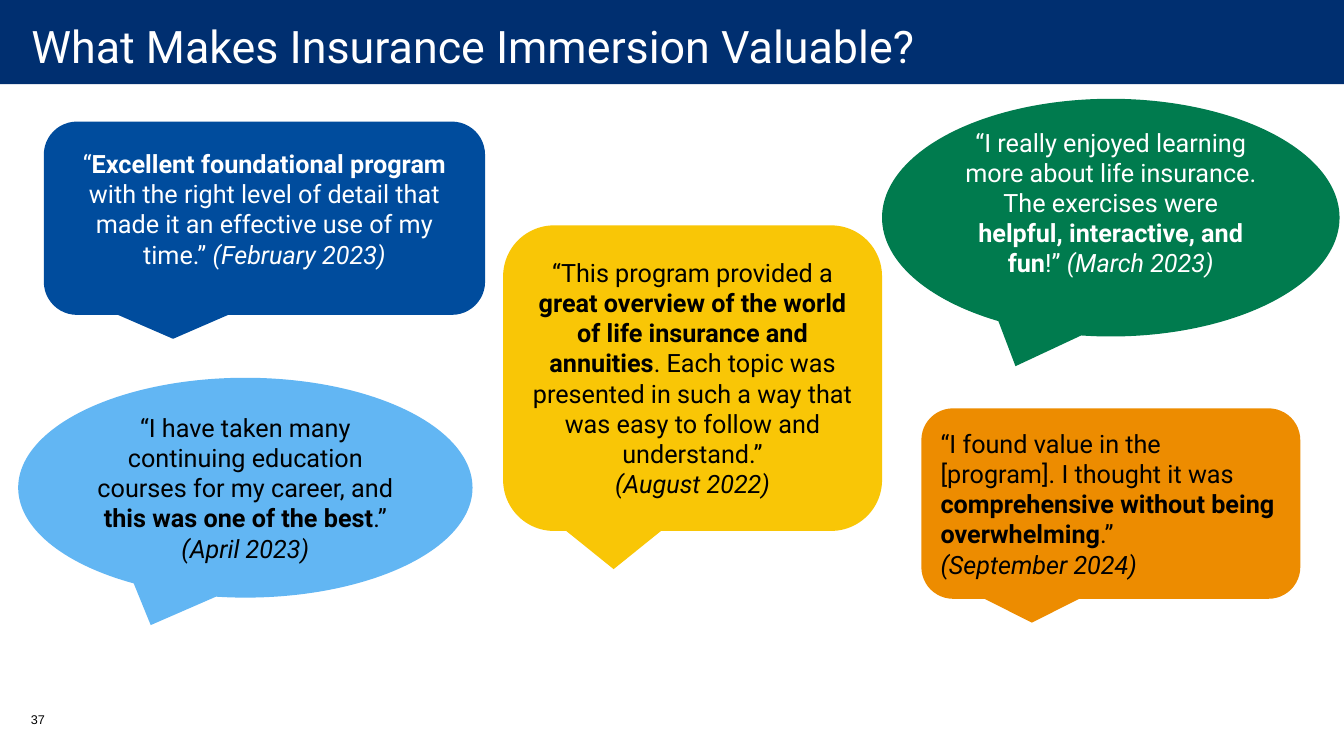
from pptx import Presentation
from pptx.dml.color import RGBColor
from pptx.enum import shapes, text
from pptx.util import Cm, Pt

COLORS = {
    "navy": "002F70", "blue": "004C9D", "sky": "62B6F3", "yellow": "F9C606",
    "green": "007B4E", "orange": "ED8C00", "white": "FFFFFF", "black": "000000",
}
HEADLINE = "What Makes Insurance Immersion Valuable?"
PAGE_NUMBER = "37"
ROUNDED = shapes.MSO_SHAPE.ROUNDED_RECTANGULAR_CALLOUT
OVAL = shapes.MSO_SHAPE.OVAL_CALLOUT
CENTER, LEFT = text.PP_ALIGN.CENTER, text.PP_ALIGN.LEFT

# Each quote: outline, box in cm, fill, text colour, alignment,
# extra space under the text in cm, paragraphs of (words, style) runs
QUOTES = [
    (ROUNDED, (1.14, 3.1, 11.05, 4.8), "blue", "white", CENTER, 0.48, [
        [("“", ""), ("Excellent foundational program ", "bold"),
         ("with the right level of detail that made it an effective use of my time.” ", ""),
         ("(February 2023)", "italic")]]),
    (OVAL, (0.46, 9.52, 11.45, 5.54), "sky", "black", CENTER, 0, [
        [("“I have taken many continuing education courses for my career, and ", ""),
         ("this was one of the best", "bold"), (".”", "")],
        [("(April 2023)", "italic")]]),
    (ROUNDED, (12.68, 5.68, 9.55, 7.7), "yellow", "black", CENTER, 0, [
        [("“This program provided a ", ""),
         ("great overview of the world of life insurance and annuities", "bold"),
         (". Each topic was presented in such a way that was easy to follow and understand.”", "")],
        [("(August 2022)", "italic")]]),
    (OVAL, (22.23, 2.49, 11.53, 5.99), "green", "white", CENTER, 0.76, [
        [("“I really enjoyed learning more about life insurance. The exercises were ", ""),
         ("helpful, interactive, and fun", "bold"), ("!” ", ""),
         ("(March 2023)", "italic")]]),
    (ROUNDED, (23.22, 10.29, 9.55, 4.8), "orange", "black", LEFT, 0, [
        [("“I found value in the [program]. I thought it was ", ""),
         ("comprehensive without being overwhelming", "bold"), (".”", "")],
        [("(September 2024)", "italic")]]),
]


def color(name):
    return RGBColor.from_string(COLORS[name])


def add_run(paragraph, words, size, ink, face="Roboto", style=""):
    run = paragraph.add_run()
    run.text = words
    run.font.name, run.font.size = face, Pt(size)
    run.font.bold, run.font.italic = style == "bold", style == "italic"
    run.font.color.rgb = color(ink)


def add_filled(slide, outline, box, fill):
    shape = slide.shapes.add_shape(outline, *map(Cm, box))
    shape.shadow.inherit = False
    shape.fill.solid()
    shape.fill.fore_color.rgb = color(fill)
    shape.line.fill.background()
    return shape


def add_quote(slide, outline, box, fill, ink, align, space_under, paragraphs):
    callout = add_filled(slide, outline, box, fill)
    frame = callout.text_frame
    frame.word_wrap = True
    frame.vertical_anchor = text.MSO_ANCHOR.MIDDLE
    frame.margin_bottom = Cm(0.13 + space_under)
    for index, runs in enumerate(paragraphs):
        paragraph = frame.add_paragraph() if index else frame.paragraphs[0]
        paragraph.alignment = align
        for words, style in runs:
            add_run(paragraph, words, 18, ink, style=style)
    return callout


def main():
    prs = Presentation()
    prs.slide_width, prs.slide_height = Cm(33.87), Cm(19.05)
    slide = prs.slides.add_slide(prs.slide_layouts[5])

    # Header bar, placed behind the title
    bar = add_filled(slide, shapes.MSO_SHAPE.RECTANGLE, (0, -0.08, 33.87, 2.2), "navy")
    slide.shapes._spTree.insert(2, bar._element)

    # Title
    title = slide.shapes.title
    title.left, title.top, title.width, title.height = map(Cm, (0.03, -0.08, 33.84, 2.46))
    frame = title.text_frame
    frame.word_wrap = True
    frame.auto_size = text.MSO_AUTO_SIZE.NONE
    frame.vertical_anchor = text.MSO_ANCHOR.MIDDLE
    frame.margin_left, frame.margin_right = Cm(0.76), Cm(0.51)
    frame.margin_top = frame.margin_bottom = 0
    frame.paragraphs[0].alignment = LEFT
    add_run(frame.paragraphs[0], HEADLINE, 32, "white")

    # Page number
    page = slide.shapes.add_textbox(*map(Cm, (0.53, 17.81, 1.24, 1.02))).text_frame
    page.word_wrap = True
    add_run(page.paragraphs[0], PAGE_NUMBER, 9, "black", "Arial")

    # Participant quotes
    for quote in QUOTES:
        callout = add_quote(slide, *quote)
        if quote[2] == "blue":
            callout.line.color.rgb = color("blue")
            callout.line.width = Pt(2)

    prs.save("out.pptx")


if __name__ == "__main__":
    main()
